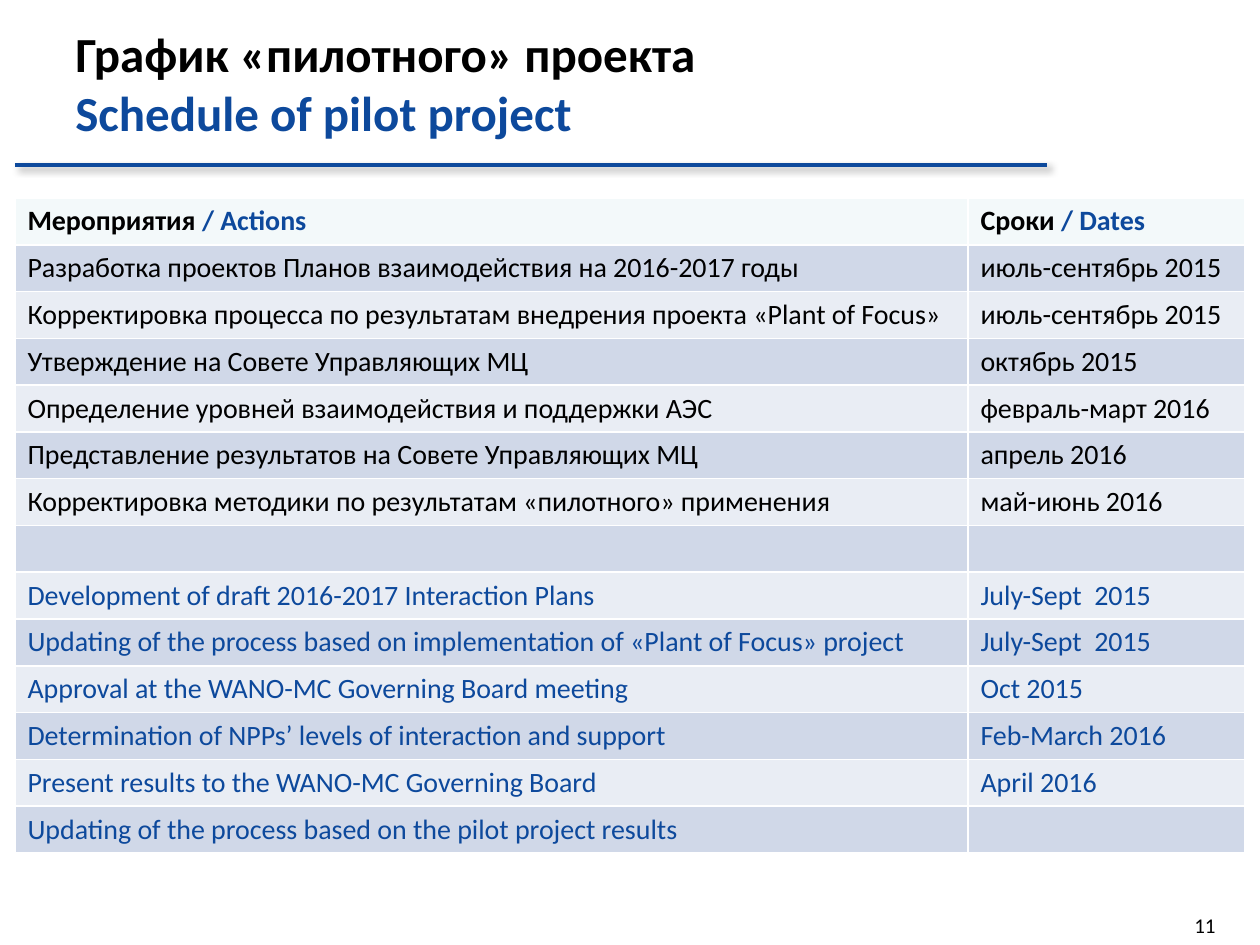
from dataclasses import dataclass

from lxml import etree
from pptx import Presentation
from pptx.dml.color import RGBColor
from pptx.enum.shapes import MSO_CONNECTOR
from pptx.enum.text import MSO_ANCHOR, PP_ALIGN
from pptx.oxml.ns import qn
from pptx.util import Emu, Pt

STRAIGHT = MSO_CONNECTOR.STRAIGHT
MIDDLE = MSO_ANCHOR.MIDDLE
RIGHT = PP_ALIGN.RIGHT
PIXEL = 914400 / 126
EMU_PER_POINT = 12700


@dataclass(frozen=True)
class Theme:
    font: str = "Calibri"
    black: str = "000000"
    blue: str = "0D499C"
    white: str = "FFFFFF"
    header: str = "F3F9FA"
    bands: tuple[str, str] = ("D0D8E8", "E9EDF4")
    title_size: int = 28
    table_size: int = 16
    number_size: int = 12


@dataclass(frozen=True)
class Box:
    left: int
    top: int
    width: int
    height: int

    def lengths(self) -> tuple[Emu, Emu, Emu, Emu]:
        return px(self.left), px(self.top), px(self.width), px(self.height)


@dataclass(frozen=True)
class Step:
    action: str
    date: str
    color: str


THEME = Theme()
TITLE_BOX = Box(63, 0, 1134, 165)
NUMBER_BOX = Box(1125, 906, 103, 39)
TABLE_BOX = Box(15, 198, 1230, 655)
COLUMN_WIDTHS = (953, 277)
RULE_LEFT, RULE_RIGHT, RULE_TOP = 15, 1047, 165

HEADINGS = (("Мероприятия", " / Actions"), ("Сроки", " / Dates"))
RUSSIAN_STEPS = (
    ("Разработка проектов Планов взаимодействия на 2016-2017 годы", "июль-сентябрь 2015"),
    ("Корректировка процесса по результатам внедрения проекта «Plant of Focus»",
     "июль-сентябрь 2015"),
    ("Утверждение на Совете Управляющих МЦ", "октябрь 2015"),
    ("Определение уровней взаимодействия и поддержки АЭС", "февраль-март 2016"),
    ("Представление результатов на Совете Управляющих МЦ", "апрель 2016"),
    ("Корректировка методики по результатам «пилотного» применения", "май-июнь 2016"),
)
ENGLISH_STEPS = (
    ("Development of draft 2016-2017 Interaction Plans", "July-Sept  2015"),
    ("Updating of the process based on implementation of «Plant of Focus» project",
     "July-Sept  2015"),
    ("Approval at the WANO-MC Governing Board meeting", "Oct 2015"),
    ("Determination of NPPs’ levels of interaction and support", "Feb-March 2016"),
    ("Present results to the WANO-MC Governing Board", "April 2016"),
    ("Updating of the process based on the pilot project results", ""),
)
STEPS = (
    *(Step(action, date, THEME.black) for action, date in RUSSIAN_STEPS),
    Step("", "", THEME.black),
    *(Step(action, date, THEME.blue) for action, date in ENGLISH_STEPS),
)


def px(length: float) -> Emu:
    return Emu(round(length * PIXEL))


def add_xml(parent, tag: str, **attributes):
    values = {name: str(value) for name, value in attributes.items()}
    return etree.SubElement(parent, qn(tag), values)


def write_text(paragraph, text: str, *, size: int, color: str = THEME.black,
               bold: bool = False) -> None:
    if not text:
        add_xml(paragraph._p, "a:endParaRPr", sz=size * 100)
        return
    run = paragraph.add_run()
    run.text = text
    run.font.name = THEME.font
    run.font.size = Pt(size)
    run.font.bold = bold
    run.font.color.rgb = RGBColor.from_string(color)


def add_text_box(slide, box: Box):
    frame = slide.shapes.add_textbox(*box.lengths()).text_frame
    frame.word_wrap = True
    frame.vertical_anchor = MIDDLE
    return frame.paragraphs[0]


def add_title(slide) -> None:
    paragraph = add_text_box(slide, TITLE_BOX)
    write_text(paragraph, "График «пилотного» проекта", size=THEME.title_size, bold=True)
    paragraph.add_line_break()
    write_text(paragraph, "Schedule of pilot project", size=THEME.title_size,
               color=THEME.blue, bold=True)


def add_title_rule(slide) -> None:
    rule = slide.shapes.add_connector(
        STRAIGHT, px(RULE_LEFT), px(RULE_TOP), px(RULE_RIGHT), px(RULE_TOP))
    rule.line.color.rgb = RGBColor.from_string(THEME.blue)
    rule.line.width = Pt(2)
    effects = add_xml(rule._element.spPr, "a:effectLst")
    shadow = add_xml(effects, "a:outerShdw", blurRad=4 * EMU_PER_POINT,
                     dist=3 * EMU_PER_POINT, dir=45 * 60000, algn="tl", rotWithShape=0)
    color = add_xml(shadow, "a:srgbClr", val=THEME.black)
    add_xml(color, "a:alpha", val=40000)


def format_cell(cell, fill: str) -> None:
    properties = cell._tc.get_or_add_tcPr()
    for side in ("a:lnL", "a:lnR", "a:lnT", "a:lnB"):
        border = add_xml(properties, side, w=EMU_PER_POINT)
        add_xml(add_xml(border, "a:solidFill"), "a:srgbClr", val=THEME.white)
    cell.fill.solid()
    cell.fill.fore_color.rgb = RGBColor.from_string(fill)


def add_schedule(slide) -> None:
    row_count = len(STEPS) + 1
    table = slide.shapes.add_table(
        row_count, len(COLUMN_WIDTHS), *TABLE_BOX.lengths()).table
    for column, width in zip(table.columns, COLUMN_WIDTHS):
        column.width = px(width)
    for row in table.rows:
        row.height = px(TABLE_BOX.height / row_count)
    for column, (russian, english) in enumerate(HEADINGS):
        cell = table.cell(0, column)
        format_cell(cell, THEME.header)
        paragraph = cell.text_frame.paragraphs[0]
        write_text(paragraph, russian, size=THEME.table_size, bold=True)
        write_text(paragraph, english, size=THEME.table_size, color=THEME.blue, bold=True)
    for index, step in enumerate(STEPS):
        for column, text in enumerate((step.action, step.date)):
            cell = table.cell(index + 1, column)
            format_cell(cell, THEME.bands[index % 2])
            write_text(cell.text_frame.paragraphs[0], text,
                       size=THEME.table_size, color=step.color)


def add_slide_number(slide) -> None:
    paragraph = add_text_box(slide, NUMBER_BOX)
    paragraph.alignment = RIGHT
    write_text(paragraph, "11", size=THEME.number_size)


def main() -> None:
    presentation = Presentation()
    presentation.slide_width = px(1260)
    presentation.slide_height = px(945)
    slide = presentation.slides.add_slide(presentation.slide_layouts[6])
    add_title_rule(slide)
    add_title(slide)
    add_slide_number(slide)
    add_schedule(slide)
    presentation.save("out.pptx")


if __name__ == "__main__":
    main()
